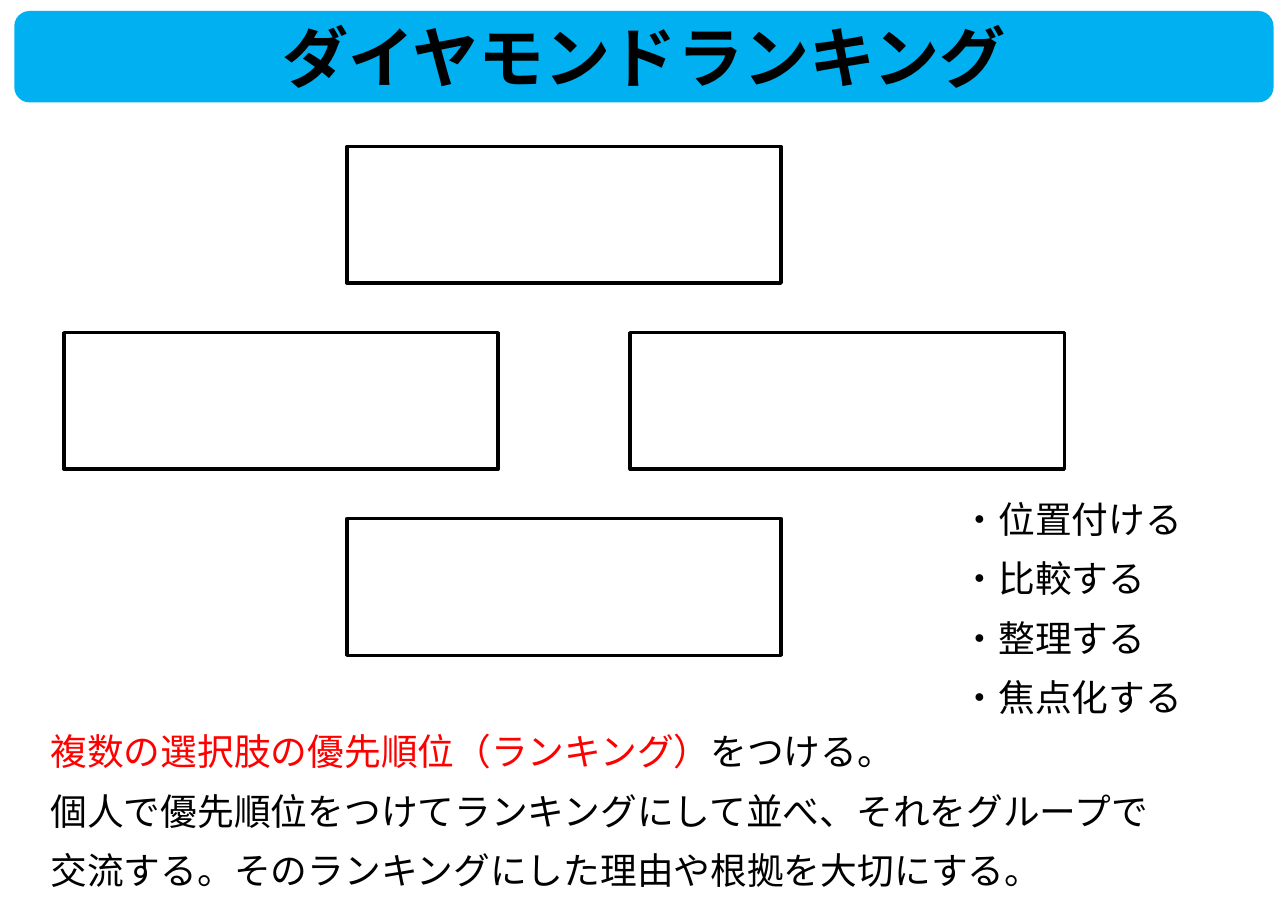
from lxml import etree
from pptx import Presentation
from pptx.dml.color import RGBColor
from pptx.enum.shapes import MSO_SHAPE
from pptx.enum.text import MSO_ANCHOR, PP_ALIGN
from pptx.oxml.ns import qn
from pptx.util import Inches, Pt

ROUNDED = MSO_SHAPE.ROUNDED_RECTANGLE
RECTANGLE = MSO_SHAPE.RECTANGLE
TOP, BOTTOM = MSO_ANCHOR.TOP, MSO_ANCHOR.BOTTOM
LEFT, CENTER = PP_ALIGN.LEFT, PP_ALIGN.CENTER

COLORS = {"banner": "00B0F0", "ink": "000000", "accent": "FF0000", "card": "FFFFFF"}
FONT = "Noto Sans CJK JP"

TITLE = [[("ダイヤモンドランキング", "ink")]]
EXPLANATION = [
    [("複数の選択肢の優先順位（ランキング）", "accent"), ("をつける。", "ink")],
    [("個人で優先順位をつけてランキングにして並べ、それをグループで", "ink")],
    [("交流する。そのランキングにした理由や根拠を大切にする。", "ink")],
]
SKILLS = [[(f"・{skill}", "ink")] for skill in ("位置付ける", "比較する", "整理する", "焦点化する")]
DIAMOND = [(1, 0), (0, 1), (2, 1), (1, 2)]


class RankingPage:
    """Draws the elements of the ranking slide in one shared style."""

    def __init__(self, deck):
        self.page = deck.slides.add_slide(deck.slide_layouts[6])

    def shape(self, kind, left, top, width, height, fill, line=None):
        box = self.page.shapes.add_shape(
            kind, Inches(left), Inches(top), Inches(width), Inches(height))
        box.shadow.inherit = False
        box.fill.solid()
        box.fill.fore_color.rgb = RGBColor.from_string(COLORS[fill])
        if line:
            box.line.color.rgb = RGBColor.from_string(COLORS[line])
            box.line.width = Pt(2.25)
        else:
            box.line.fill.background()

    def text(self, left, top, width, height, paragraphs, size=24, bold=False,
             align=LEFT, anchor=TOP, spacing=Pt(28.8)):
        box = self.page.shapes.add_textbox(
            Inches(left), Inches(top), Inches(width), Inches(height))
        frame = box.text_frame
        frame.word_wrap = True
        frame.vertical_anchor = anchor
        for index, spans in enumerate(paragraphs):
            para = frame.add_paragraph() if index else frame.paragraphs[0]
            para.alignment = align
            para.line_spacing = spacing
            para.space_before = Pt(10 if index else 0)
            for words, color in spans:
                self.span(para, words, color, size, bold)

    def span(self, para, words, color, size, bold):
        span = para.add_run()
        span.text = words
        span.font.size = Pt(size)
        span.font.bold = bold
        span.font.color.rgb = RGBColor.from_string(COLORS[color])
        span.font.name = FONT
        etree.SubElement(span._r.get_or_add_rPr(), qn("a:ea"), typeface=FONT)


def main():
    deck = Presentation()
    deck.slide_width, deck.slide_height = Inches(11.69), Inches(8.27)
    ranking = RankingPage(deck)
    ranking.shape(ROUNDED, 0.13, 0.1, 11.43, 0.83, "banner")
    ranking.text(0, 0.1, 11.69, 0.83, TITLE, size=43.2, bold=True,
                 align=CENTER, anchor=BOTTOM, spacing=0.9)
    ranking.text(0.36, 6.57, 11.01, 1.59, EXPLANATION)
    for column, row in DIAMOND:
        ranking.shape(RECTANGLE, 0.58 + 2.57 * column, 1.33 + 1.69 * row,
                      3.94, 1.24, "card", line="ink")
    ranking.text(8.63, 4.46, 2.25, 2.14, SKILLS)
    deck.save("out.pptx")


if __name__ == "__main__":
    main()
